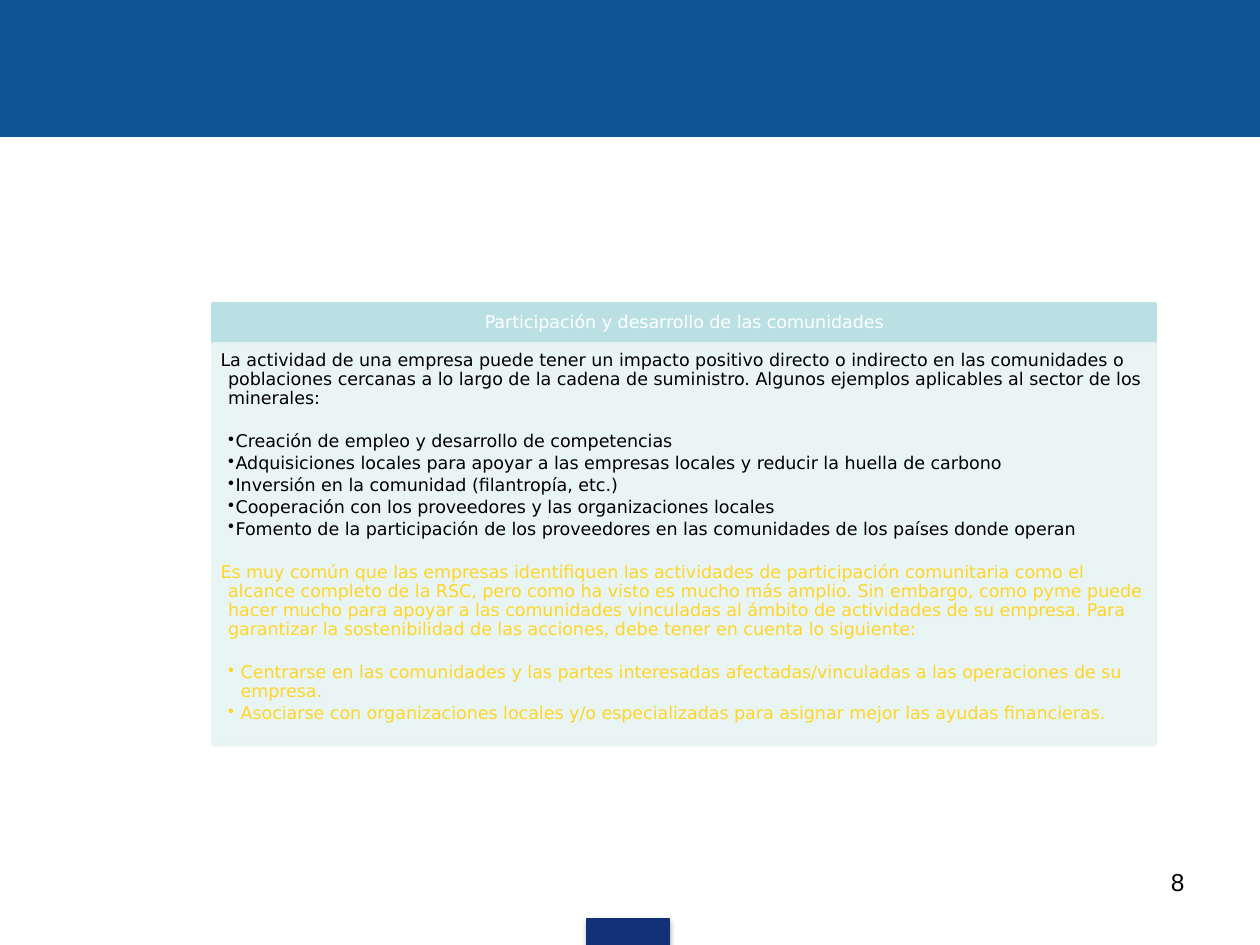
from dataclasses import dataclass
from typing import Any, Optional

from lxml import etree
from pptx import Presentation
from pptx.dml.color import RGBColor
from pptx.enum import shapes as sh, text as tx
from pptx.oxml import ns
from pptx.util import Inches, Pt

BLUE = RGBColor(0x0F, 0x54, 0x94)
NAVY = RGBColor(0x13, 0x31, 0x76)
TEAL = RGBColor(0xBB, 0xE0, 0xE3)
PALE = RGBColor(0xE7, 0xF3, 0xF4)
GOLD = RGBColor(0xFF, 0xD6, 0x24)
BLACK = RGBColor(0, 0, 0)
WHITE = RGBColor(0xFF, 0xFF, 0xFF)
FONT = "DejaVu Sans"
LEFT, WIDE = 1.69, 7.48


@dataclass
class Box:
    left: float
    top: float
    width: float
    height: float
    fill: RGBColor
    line: float = 0.75
    alpha: Optional[int] = None


@dataclass
class Para:
    words: str
    color: RGBColor = BLACK
    hang: float = 0.06
    bullet: bool = False
    gap: float = 0


def apply(item: Any, form: dict) -> None:
    for name, value in form.items():
        setattr(item, name, value)


def add(root: Any, tag: str, **vals: Any) -> Any:
    return etree.SubElement(root, ns.qn(tag), {k: str(v) for k, v in vals.items()})


def draw(slide: Any, box: Box) -> Any:
    shape = slide.shapes.add_shape(
        sh.MSO_SHAPE.RECTANGLE,
        *map(Inches, (box.left, box.top, box.width, box.height)),
    )
    shape.shadow.inherit = False
    shape.fill.solid()
    shape.fill.fore_color.rgb = box.fill
    shape.line.color.rgb = box.fill
    shape.line.width = Pt(box.line)
    if box.alpha:
        for color in shape.element.spPr.iter(ns.qn("a:srgbClr")):
            add(color, "a:alpha", val=box.alpha * 1000)
    return shape


def shade(shape: Any) -> None:
    effects = shape.element.spPr.find(ns.qn("a:effectLst"))
    outer = add(effects, "a:outerShdw", blurRad=Pt(3.1), dist=Pt(1.8),
                dir=90 * 60000, rotWithShape=0)
    add(add(outer, "a:srgbClr", val="000000"), "a:alpha", val=35000)


def frame(shape: Any, inset: tuple, anchor: Any) -> Any:
    sides = ("margin_left", "margin_top", "margin_right", "margin_bottom")
    form = dict(zip(sides, map(Inches, inset)))
    apply(shape.text_frame, {**form, "word_wrap": True, "vertical_anchor": anchor})
    return shape.text_frame


def write(para: Any, words: str, size: float, color: RGBColor,
          font: str, form: dict) -> None:
    apply(para, form)
    run = para.add_run()
    run.text = words
    apply(run.font, {"name": font, "size": Pt(size)})
    run.font.color.rgb = color


def fill(body: Any, paras: list[Para]) -> None:
    for i, item in enumerate(paras):
        para = body.add_paragraph() if i else body.paragraphs[0]
        props = para._p.get_or_add_pPr()
        start = 0.06 if item.bullet else 0
        props.set("marL", str(Inches(item.hang)))
        props.set("indent", str(Inches(start - item.hang)))
        form = {"alignment": tx.PP_ALIGN.LEFT, "line_spacing": 0.9,
                "space_after": Pt(1.7)}
        if item.gap:
            form["space_before"] = Pt(item.gap)
        write(para, item.words, 10, item.color, FONT, form)
        if item.bullet:
            add(props, "a:buChar", char="•")


INTRO = (
    "La actividad de una empresa puede tener un impacto positivo directo o "
    "indirecto en las comunidades o poblaciones cercanas a lo largo de la "
    "cadena de suministro. Algunos ejemplos aplicables al sector de los minerales:"
)
CASES = [
    "Creación de empleo y desarrollo de competencias",
    "Adquisiciones locales para apoyar a las empresas locales y reducir la huella de carbono",
    "Inversión en la comunidad (filantropía, etc.)",
    "Cooperación con los proveedores y las organizaciones locales",
    "Fomento de la participación de los proveedores en las comunidades de los países donde operan",
]
ADVICE = (
    "Es muy común que las empresas identifiquen las actividades de participación "
    "comunitaria como el alcance completo de la RSC, pero como ha visto es mucho "
    "más amplio. Sin embargo, como pyme puede hacer mucho para apoyar a las "
    "comunidades vinculadas al ámbito de actividades de su empresa. Para "
    "garantizar la sostenibilidad de las acciones, debe tener en cuenta lo siguiente:"
)
STEPS = [
    "Centrarse en las comunidades y las partes interesadas afectadas/vinculadas a las operaciones de su empresa.",
    "Asociarse con organizaciones locales y/o especializadas para asignar mejor las ayudas financieras.",
]
GAP = 12.2


def points(items: list[str], color: RGBColor, hang: float) -> list[Para]:
    return [Para(words, color, hang, True, 0 if i else GAP)
            for i, words in enumerate(items)]


def main() -> None:
    deck = Presentation()
    apply(deck, {"slide_width": Inches(10), "slide_height": Inches(7.5)})
    slide = deck.slides.add_slide(deck.slide_layouts[6])

    draw(slide, Box(0, 0, 10, 1.08, BLUE))
    shade(draw(slide, Box(4.66, 7.29, 0.65, 0.22, NAVY)))

    head = draw(slide, Box(LEFT, 2.41, WIDE, 0.31, TEAL, 2))
    title = frame(head, (0.08, 0.04, 0.08, 0.04), tx.MSO_ANCHOR.MIDDLE)
    write(title.paragraphs[0], "Participación y desarrollo de las comunidades",
          10, WHITE, FONT,
          {"alignment": tx.PP_ALIGN.CENTER, "line_spacing": 0.9})

    panel = draw(slide, Box(LEFT, 2.73, WIDE, 3.18, PALE, 2, 90))
    body = frame(panel, (0.06, 0.06, 0.08, 0.09), tx.MSO_ANCHOR.TOP)
    fill(body, [
        Para(INTRO),
        *points(CASES, BLACK, 0.12),
        Para(ADVICE, GOLD, gap=GAP),
        *points(STEPS, GOLD, 0.16),
    ])

    page = slide.shapes.add_textbox(*map(Inches, (7.17, 6.83, 2.33, 0.52)))
    label = frame(page, (0.1, 0.05, 0.1, 0.05), tx.MSO_ANCHOR.TOP)
    write(label.paragraphs[0], "8", 14, BLACK, "Arial",
          {"alignment": tx.PP_ALIGN.RIGHT})

    deck.save("out.pptx")


if __name__ == "__main__":
    main()
